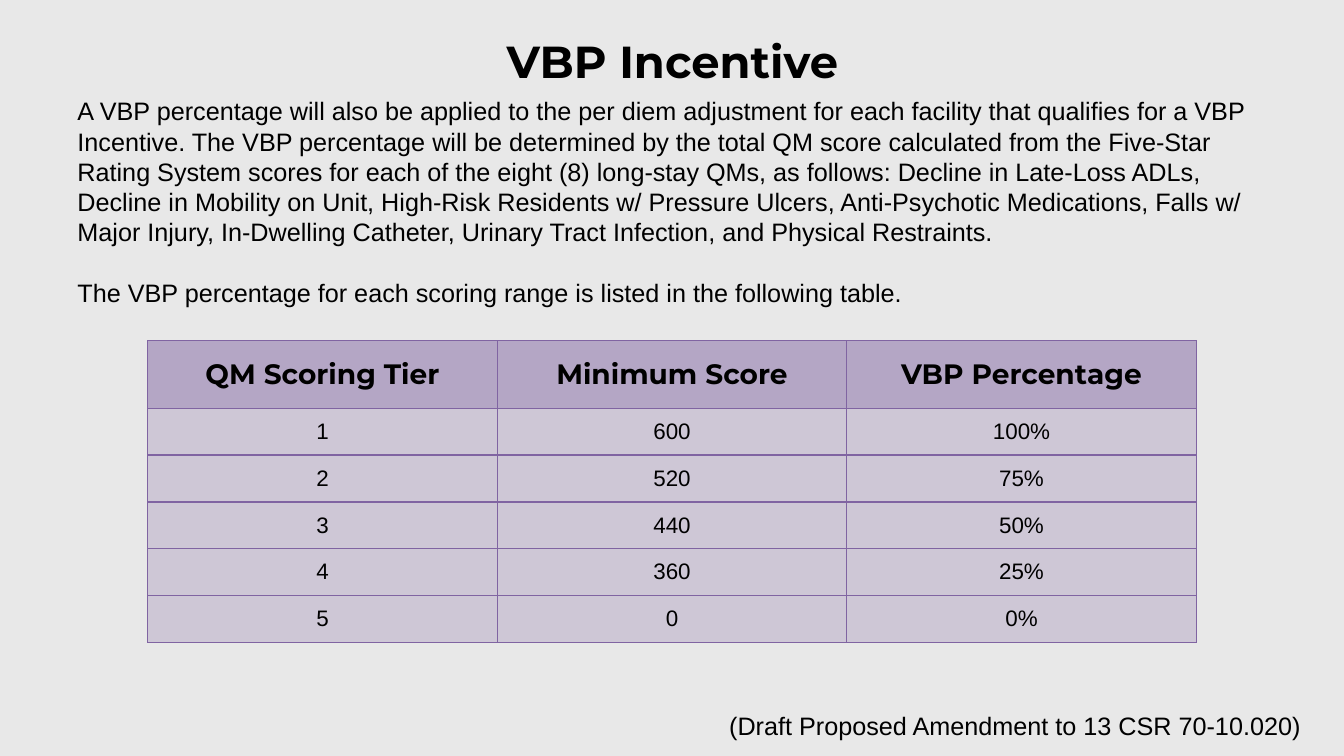
from lxml import etree
from pptx import Presentation
from pptx.dml.color import RGBColor
from pptx.enum.text import MSO_ANCHOR, PP_ALIGN
from pptx.oxml.ns import qn
from pptx.util import Inches, Pt

CENTER, LEFT, RIGHT = PP_ALIGN.CENTER, PP_ALIGN.LEFT, PP_ALIGN.RIGHT
TOP, MIDDLE = MSO_ANCHOR.TOP, MSO_ANCHOR.MIDDLE
COLORS = {"background": "E8E8E8", "text": "000000", "border": "8064A2",
          "header": "B4A6C5", "row": "CEC7D6"}
FORMATS = {
    "title": {"name": "Montserrat", "size": Pt(32), "bold": True},
    "body": {"name": "Arial", "size": Pt(18), "bold": False},
    "header": {"name": "Montserrat", "size": Pt(20), "bold": True},
    "row": {"name": "Arial", "size": Pt(16), "bold": False},
}

prs = Presentation()
prs.slide_width, prs.slide_height = Inches(13.33), Inches(7.5)
slide = prs.slides.add_slide(prs.slide_layouts[6])
slide.background.fill.solid()
slide.background.fill.fore_color.rgb = RGBColor.from_string(COLORS["background"])


def write(paragraph, text, style, align):
    paragraph.text = text
    paragraph.alignment = align
    for attribute, value in FORMATS[style].items():
        setattr(paragraph.font, attribute, value)
    paragraph.font.color.rgb = RGBColor.from_string(COLORS["text"])


def add_text(box, paragraphs, style, align, anchor=TOP):
    """Add a text box at (left, top, width, height) in inches and return its frame."""
    frame = slide.shapes.add_textbox(*map(Inches, box)).text_frame
    frame.word_wrap = True
    frame.vertical_anchor = anchor
    for index, text in enumerate(paragraphs):
        paragraph = frame.add_paragraph() if index else frame.paragraphs[0]
        write(paragraph, text, style, align)
    return frame


add_text((0.07, 0, 13.2, 1.2), ["VBP Incentive"], "title", CENTER, MIDDLE)

explanation = add_text((0.67, 0.9, 12, 2.3), [
    "A VBP percentage will also be applied to the per diem adjustment for each "
    "facility that qualifies for a VBP Incentive. The VBP percentage will be "
    "determined by the total QM score calculated from the Five-Star Rating System "
    "scores for each of the eight (8) long-stay QMs, as follows: Decline in "
    "Late-Loss ADLs, Decline in Mobility on Unit, High-Risk Residents w/ Pressure "
    "Ulcers, Anti-Psychotic Medications, Falls w/ Major Injury, In-Dwelling "
    "Catheter, Urinary Tract Infection, and Physical Restraints.",
    "The VBP percentage for each scoring range is listed in the following table.",
], "body", LEFT)
explanation.paragraphs[1].space_before = Pt(22)

add_text((7, 7, 6, 0.4), ["(Draft Proposed Amendment to 13 CSR 70-10.020)"],
         "body", RIGHT)

tiers = [
    ("QM Scoring Tier", "Minimum Score", "VBP Percentage"),
    ("1", "600", "100%"),
    ("2", "520", "75%"),
    ("3", "440", "50%"),
    ("4", "360", "25%"),
    ("5", "0", "0%"),
]
HEADER_HEIGHT, ROW_HEIGHT = 0.67, 0.465
table_height = HEADER_HEIGHT + ROW_HEIGHT * (len(tiers) - 1)
tier_table = slide.shapes.add_table(
    len(tiers), len(tiers[0]), Inches(1.465), Inches(3.38),
    Inches(10.4), Inches(table_height)).table

for row_index, values in enumerate(tiers):
    style = "row" if row_index else "header"
    tier_table.rows[row_index].height = Inches(ROW_HEIGHT if row_index else HEADER_HEIGHT)
    for column_index, value in enumerate(values):
        cell = tier_table.cell(row_index, column_index)
        cell.vertical_anchor = MIDDLE
        write(cell.text_frame.paragraphs[0], value, style, CENTER)
        properties = cell._tc.get_or_add_tcPr()
        for side in ("lnL", "lnR", "lnT", "lnB"):
            border = etree.SubElement(properties, qn(f"a:{side}"), w=str(Pt(1)))
            border_fill = etree.SubElement(border, qn("a:solidFill"))
            etree.SubElement(border_fill, qn("a:srgbClr"), val=COLORS["border"])
        cell.fill.solid()
        cell.fill.fore_color.rgb = RGBColor.from_string(COLORS[style])

prs.save("out.pptx")
